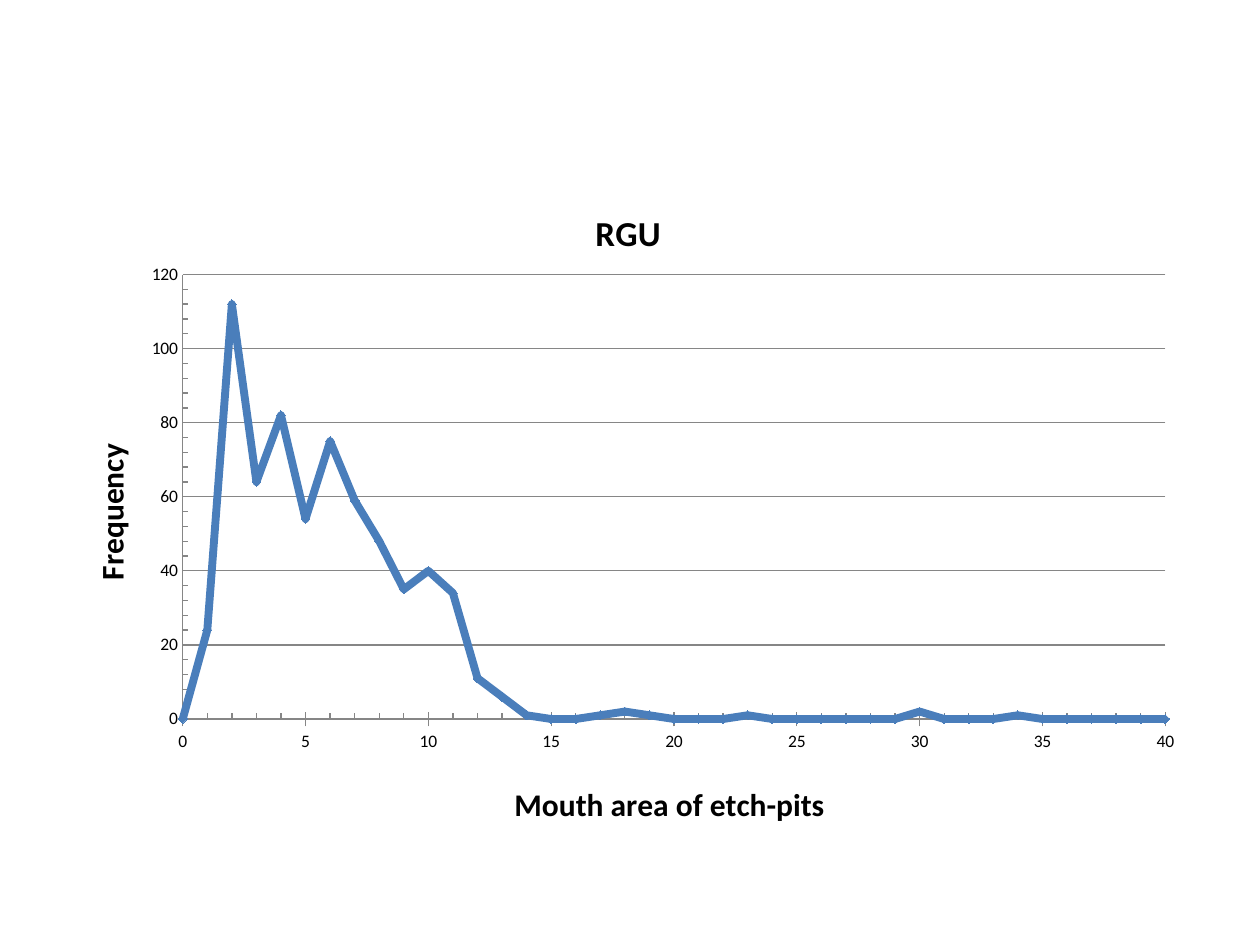
from lxml import etree
from pptx import Presentation
from pptx import util as u
from pptx.chart.data import XyChartData
from pptx.dml.color import RGBColor
from pptx.enum import chart as c
from pptx.oxml import ns

BLACK = RGBColor(0x00, 0x00, 0x00)
GREY = RGBColor(0x86, 0x86, 0x86)
BLUE = RGBColor(0x4A, 0x7E, 0xBB)
MARKER_BLUE = RGBColor(0x4F, 0x81, 0xBD)

FREQUENCIES = [0, 24, 112, 64, 82, 54, 75, 59, 48, 35, 40, 34, 11, 6, 1,
               0, 0, 1, 2, 1, 0, 0, 0, 1, 0, 0, 0, 0, 0, 0, 2,
               0, 0, 0, 1, 0, 0, 0, 0, 0, 0]


def set_layout(parent, after, **settings):
    for old in parent.findall(ns.qn("c:layout")):
        parent.remove(old)
    layout = etree.Element(ns.qn("c:layout"))
    manual = etree.SubElement(layout, ns.qn("c:manualLayout"))
    for name, value in settings.items():
        etree.SubElement(manual, ns.qn("c:" + name)).set("val", str(value))
    if after is None:
        parent.insert(0, layout)
    else:
        after.addnext(layout)


def set_title(owner, title, wording, size, x, y):
    paragraph = title.text_frame.paragraphs[0]
    paragraph.text = wording
    paragraph.font.size = u.Pt(size)
    paragraph.font.bold = True
    paragraph.font.color.rgb = BLACK
    element = owner.find(ns.qn("c:title"))
    set_layout(element, element.find(ns.qn("c:tx")),
               xMode="edge", yMode="edge", x=x, y=y)


def format_axis(axis, maximum, major_unit, minor_unit, major_tick):
    axis.minimum_scale = 0
    axis.maximum_scale = maximum
    axis.major_unit = major_unit
    axis.minor_unit = minor_unit
    axis.major_tick_mark = major_tick
    axis.minor_tick_mark = c.XL_TICK_MARK.INSIDE
    axis.tick_label_position = c.XL_TICK_LABEL_POSITION.NEXT_TO_AXIS
    axis.tick_labels.number_format = "General"
    axis.tick_labels.number_format_is_linked = False
    axis.format.line.color.rgb = GREY
    axis.format.line.width = u.Pt(0.75)


def format_series(series):
    series.smooth = False
    series.format.line.color.rgb = BLUE
    series.format.line.width = u.Pt(4.5)
    marker = series.marker
    marker.style = c.XL_MARKER_STYLE.DIAMOND
    marker.size = 5
    marker.format.fill.solid()
    marker.format.fill.fore_color.rgb = MARKER_BLUE
    marker.format.line.color.rgb = BLUE


def add_frequency_chart(slide, left, top, width, height):
    data = XyChartData()
    points = data.add_series("Series 1")
    for area, frequency in enumerate(FREQUENCIES):
        points.add_data_point(area, frequency)
    chart = slide.shapes.add_chart(
        c.XL_CHART_TYPE.XY_SCATTER_LINES, left, top, width, height, data).chart
    chart.has_legend = False
    chart.font.name = "Calibri"
    chart.font.size = u.Pt(10)
    chart.font.color.rgb = BLACK
    plot = chart.plots[0]
    plot.vary_by_categories = False
    format_series(plot.series[0])

    area_axis, frequency_axis = chart.category_axis, chart.value_axis
    format_axis(area_axis, 40, 5, 1, c.XL_TICK_MARK.CROSS)
    format_axis(frequency_axis, 120, 20, 4, c.XL_TICK_MARK.NONE)
    area_axis.has_major_gridlines = False
    frequency_axis.has_major_gridlines = True
    frequency_axis.major_gridlines.format.line.color.rgb = GREY
    frequency_axis.major_gridlines.format.line.width = u.Pt(0.75)

    chart_element = chart.element.find(ns.qn("c:chart"))
    set_title(chart_element, chart.chart_title, "RGU", 20, 0.47, 0.05)
    set_title(area_axis.element if hasattr(area_axis, "element") else area_axis._element,
              area_axis.axis_title, "Mouth area of etch-pits", 18, 0.4, 0.9)
    set_title(frequency_axis._element, frequency_axis.axis_title,
              "Frequency", 18, 0.03, 0.4)
    body = frequency_axis.axis_title.text_frame._txBody.find(ns.qn("a:bodyPr"))
    body.set("rot", "-5400000")
    body.set("vert", "horz")
    set_layout(chart_element.find(ns.qn("c:plotArea")), None,
               layoutTarget="inner", xMode="edge", yMode="edge",
               x=0.116, y=0.158, w=0.856, h=0.657)


def main():
    presentation = Presentation()
    presentation.slide_width = u.Cm(25.4)
    presentation.slide_height = u.Cm(19.05)
    slide = presentation.slides.add_slide(presentation.slide_layouts[6])
    add_frequency_chart(slide, u.Cm(1), u.Cm(3.38), u.Cm(23.14), u.Cm(13.64))
    presentation.save("out.pptx")


if __name__ == "__main__":
    main()
